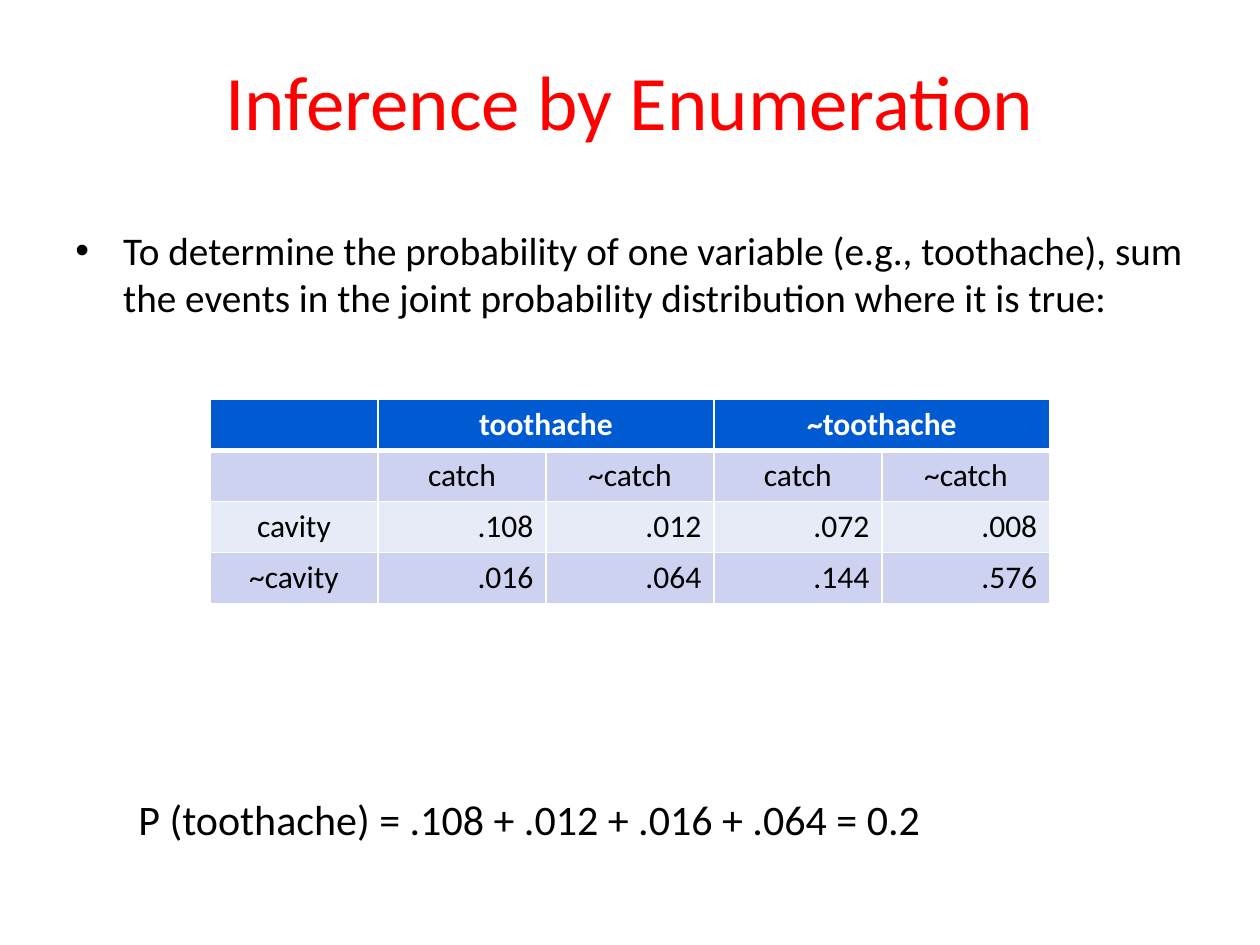
from dataclasses import dataclass

from lxml.etree import SubElement
from pptx import Presentation
from pptx.dml.color import RGBColor
from pptx.enum.text import MSO_ANCHOR as Anchor, PP_ALIGN as Align
from pptx.oxml.ns import qn
from pptx.util import Inches, Pt

RED = RGBColor(0xFF, 0x00, 0x00)
BLACK = RGBColor(0x00, 0x00, 0x00)
WHITE = RGBColor(0xFF, 0xFF, 0xFF)
BLUE = RGBColor(0x00, 0x5B, 0xD3)
BAND_DARK = RGBColor(0xCC, 0xD2, 0xEF)
BAND_LIGHT = RGBColor(0xE7, 0xEA, 0xF7)

FONT = "Calibri"
WIDTH, HEIGHT = Inches(10), Inches(7.5)

# Joint probability distribution: two header rows, then the values
JOINT = [
    ["", "toothache", "", "~toothache", ""],
    ["", "catch", "~catch", "catch", "~catch"],
    ["cavity", ".108", ".012", ".072", ".008"],
    ["~cavity", ".016", ".064", ".144", ".576"],
]
ROW_FILLS = [BLUE, BAND_DARK, BAND_LIGHT, BAND_DARK]


@dataclass
class TextItem:
    """A text box; left, top, width and height are shares of the slide."""
    text: str
    left: float
    top: float
    width: float
    height: float
    size: float
    color: RGBColor = BLACK
    align: Align = Align.LEFT
    anchor: Anchor = Anchor.TOP
    wrap: bool = True
    bullet: bool = False


ITEMS = [
    TextItem("Inference by Enumeration", 0.05, 0.02, 0.9, 0.17, 44, RED,
             Align.CENTER, Anchor.MIDDLE),
    TextItem("To determine the probability of one variable (e.g., toothache), "
             "sum the events in the joint probability distribution where it "
             "is true:", 0.05, 0.233, 0.9, 0.145, 22.4, bullet=True),
    TextItem("P (toothache) = .108 + .012 + .016 + .064 = 0.2",
             0.1, 0.833, 0.653, 0.067, 24, wrap=False),
]


def add_run(p, text: str, size: float, color: RGBColor, bold: bool = False) -> None:
    r = p.add_run()
    r.text = text
    r.font.name = FONT
    r.font.size = Pt(size)
    r.font.bold = bold
    r.font.color.rgb = color


def add_bullet(p) -> None:
    pPr = p._p.get_or_add_pPr()
    pPr.set("marL", str(Inches(0.38)))
    pPr.set("indent", str(-Inches(0.38)))
    SubElement(pPr, qn("a:buFont"), typeface="Arial")
    SubElement(pPr, qn("a:buChar"), char="•")


def add_text(slide, item: TextItem) -> None:
    sp = slide.shapes.add_textbox(int(WIDTH * item.left), int(HEIGHT * item.top),
                                  int(WIDTH * item.width), int(HEIGHT * item.height))
    tf = sp.text_frame
    tf.word_wrap = item.wrap
    tf.vertical_anchor = item.anchor
    p = tf.paragraphs[0]
    p.alignment = item.align
    if item.bullet:
        add_bullet(p)
    add_run(p, item.text, item.size, item.color)


def set_borders(cell, widths: dict[str, float]) -> None:
    """Draw white edges; border lines must come before the cell's fill."""
    tcPr = cell._tc.get_or_add_tcPr()
    for edge, width in widths.items():
        ln = SubElement(tcPr, qn(f"a:ln{edge}"), w=str(Pt(width)))
        fill = SubElement(ln, qn("a:solidFill"))
        SubElement(fill, qn("a:srgbClr"), val=str(WHITE))


def add_joint_table(slide) -> None:
    rows, cols = len(JOINT), len(JOINT[0])
    width, row_height = WIDTH * 2 // 3, Inches(0.405)
    table = slide.shapes.add_table(rows, cols, (WIDTH - width) // 2, Inches(3.17),
                                   width, row_height * rows).table
    for i, values in enumerate(JOINT):
        table.rows[i].height = row_height
        header = i == 0
        # A thick rule separates the header from the first band
        edges = {"L": 1, "R": 1, "T": 1, "B": 3 if header else 1}
        if i == 1:
            del edges["T"]
        for j, value in enumerate(values):
            cell = table.cell(i, j)
            set_borders(cell, edges)
            cell.fill.solid()
            cell.fill.fore_color.rgb = ROW_FILLS[i]
            p = cell.text_frame.paragraphs[0]
            p.alignment = Align.RIGHT if i > 1 and j > 0 else Align.CENTER
            if value:
                add_run(p, value, 18, WHITE if header else BLACK, header)
    # Each toothache heading spans its two catch columns
    for j in (1, 3):
        table.cell(0, j).merge(table.cell(0, j + 1))


def main() -> None:
    prs = Presentation()
    prs.slide_width, prs.slide_height = WIDTH, HEIGHT
    s = prs.slides.add_slide(prs.slide_layouts[6])
    for item in ITEMS:
        add_text(s, item)
    add_joint_table(s)
    prs.save("out.pptx")


if __name__ == "__main__":
    main()
